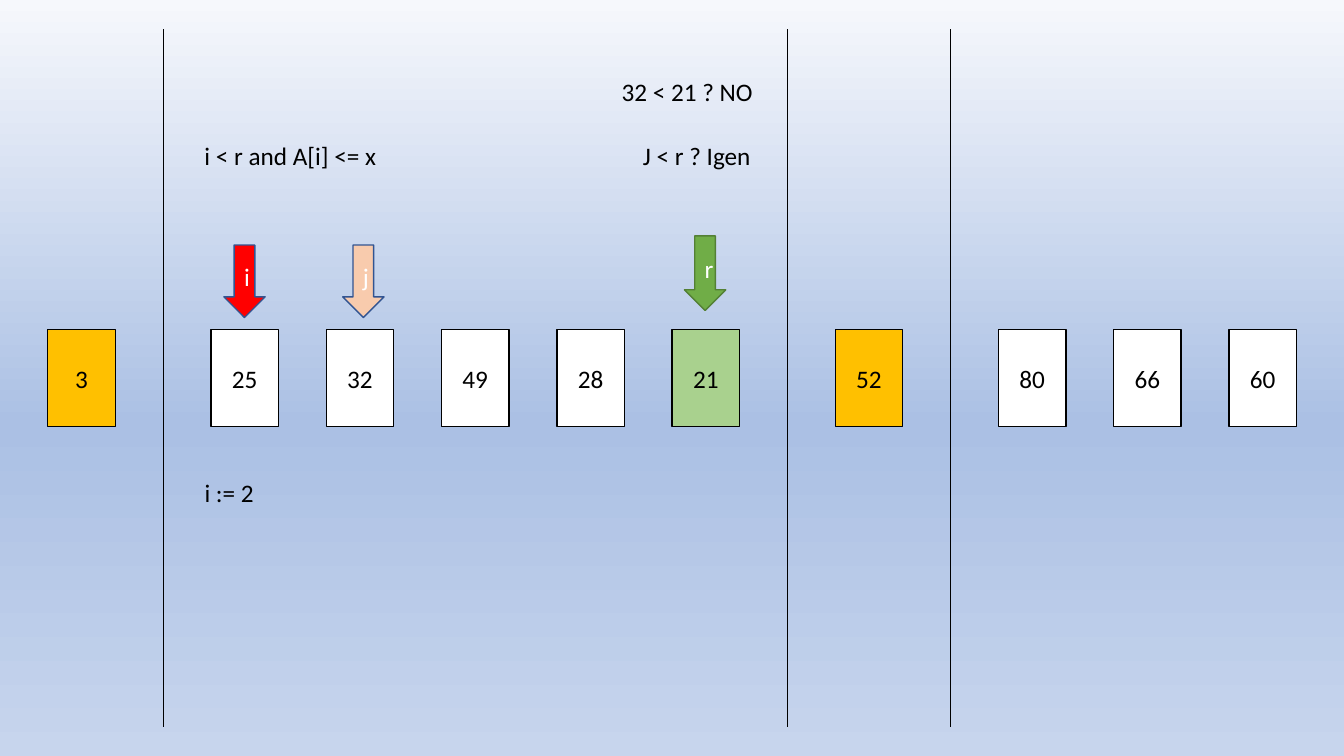
import copy

import pptx
import pptx.dml.color
import pptx.enum.shapes
import pptx.enum.text
import pptx.oxml
import pptx.oxml.ns
import pptx.util

Pt = pptx.util.Pt
RGB = pptx.dml.color.RGBColor
Kind = pptx.enum.shapes.MSO_SHAPE
Align = pptx.enum.text.PP_ALIGN
Anchor = pptx.enum.text.MSO_ANCHOR

BLACK = RGB(0x00, 0x00, 0x00)
WHITE = RGB(0xFF, 0xFF, 0xFF)
GOLD = RGB(0xFF, 0xC0, 0x00)
LIME = RGB(0xA9, 0xD1, 0x8E)
GREEN = RGB(0x70, 0xAD, 0x47)
MOSS = RGB(0x53, 0x80, 0x35)
RED = RGB(0xFF, 0x00, 0x00)
PEACH = RGB(0xF8, 0xCB, 0xAD)
NAVY = RGB(0x32, 0x54, 0x91)
SKY = [
    (0, RGB(0xF6, 0xF8, 0xFC)),
    (0.56, RGB(0xAB, 0xC0, 0xE4)),
    (1, RGB(0xC7, 0xD5, 0xED)),
]

CELL_W, CELL_H, CELL_TOP = 48.2, 69, 235.5
GAP = 34.16
GROUPS = [
    [(3, GOLD)],
    [(25, WHITE), (32, WHITE), (49, WHITE), (28, WHITE), (21, LIME)],
    [(52, GOLD)],
    [(80, WHITE), (66, WHITE), (60, WHITE)],
]
ARROWS = [
    ("i", 159.9, 175, 51.8, RED, NAVY),
    ("j", 244.8, 175, 51.8, PEACH, NAVY),
    ("r", 488.9, 168.5, 53.3, GREEN, MOSS),
]
NOTES = [
    ("32 < 21 ? NO", 437, 51.1, 162.7),
    ("J < r ? Igen", 452.2, 96.5, 103.7),
    ("i < r and A[i] <= x", 139, 96.5, 156.2),
    ("i := 2", 139, 337.7, 115.9),
]


def write(frame, text, color=BLACK, align=Align.LEFT, anchor=Anchor.TOP):
    """Put formatted text into a text frame."""
    frame.word_wrap = True
    frame.vertical_anchor = anchor
    par = frame.paragraphs[0]
    par.alignment = align
    run = par.add_run()
    run.text = text
    run.font.name = "Calibri"
    run.font.size = Pt(18)
    run.font.color.rgb = color


class Deck:
    """Hold the slide and draw its elements in one style."""

    def __init__(self):
        """Start a wide deck with one blank slide."""
        self.deck = pptx.Presentation()
        self.deck.slide_width = Pt(960)
        self.deck.slide_height = Pt(540)
        self.slide = self.deck.slides.add_slide(self.deck.slide_layouts[6])

    def shade(self, stops):
        """Fill the background with a gradient from top to bottom."""
        fill = self.slide.background.fill
        fill.gradient()
        fill.gradient_angle = 270
        marks = self.slide.element.find(".//" + pptx.oxml.ns.qn("a:gsLst"))
        while len(marks) < len(stops):
            marks.append(copy.deepcopy(marks[-1]))
        for mark, (place, color) in zip(fill.gradient_stops, stops):
            mark.position = place
            mark.color.rgb = color

    def shape(self, kind, text, left, top, width, height, fill, line, ink):
        """Draw a preset shape with centred text."""
        shape = self.slide.shapes.add_shape(
            kind, Pt(left), Pt(top), Pt(width), Pt(height))
        shape.shadow.inherit = False
        shape.fill.solid()
        shape.fill.fore_color.rgb = fill
        shape.line.color.rgb = line
        shape.line.width = Pt(1)
        write(shape.text_frame, text, color=ink,
              align=Align.CENTER, anchor=Anchor.MIDDLE)

    def note(self, text, left, top, width):
        """Add a line of plain text."""
        box = self.slide.shapes.add_textbox(
            Pt(left), Pt(top), Pt(width), Pt(29))
        box.text_frame.auto_size = pptx.enum.text.MSO_AUTO_SIZE.SHAPE_TO_FIT_TEXT
        write(box.text_frame, text)

    def rule(self, left):
        """Draw a thin upright divider."""
        line = self.slide.shapes.add_connector(
            pptx.enum.shapes.MSO_CONNECTOR.STRAIGHT,
            Pt(left), Pt(20.9), Pt(left), Pt(519.1))
        line.line.color.rgb = BLACK
        line.line.width = Pt(0.5)
        props = line.element.spPr
        props.append(pptx.oxml.parse_xml(
            "<a:effectLst %s/>" % pptx.oxml.ns.nsdecls("a")))


def main():
    """Build and save the sorting step."""
    deck = Deck()
    deck.shade(SKY)
    left = GAP
    for index, group in enumerate(GROUPS):
        if index:
            deck.rule(left)
            left += GAP
        for value, fill in group:
            deck.shape(Kind.RECTANGLE, str(value), left, CELL_TOP,
                       CELL_W, CELL_H, fill, BLACK, BLACK)
            left += CELL_W + GAP
    for text, left, top, height, fill, line in ARROWS:
        deck.shape(Kind.DOWN_ARROW, text, left, top, 29.5, height,
                   fill, line, WHITE)
    for item in NOTES:
        deck.note(*item)
    deck.deck.save("out.pptx")


if __name__ == "__main__":
    main()
